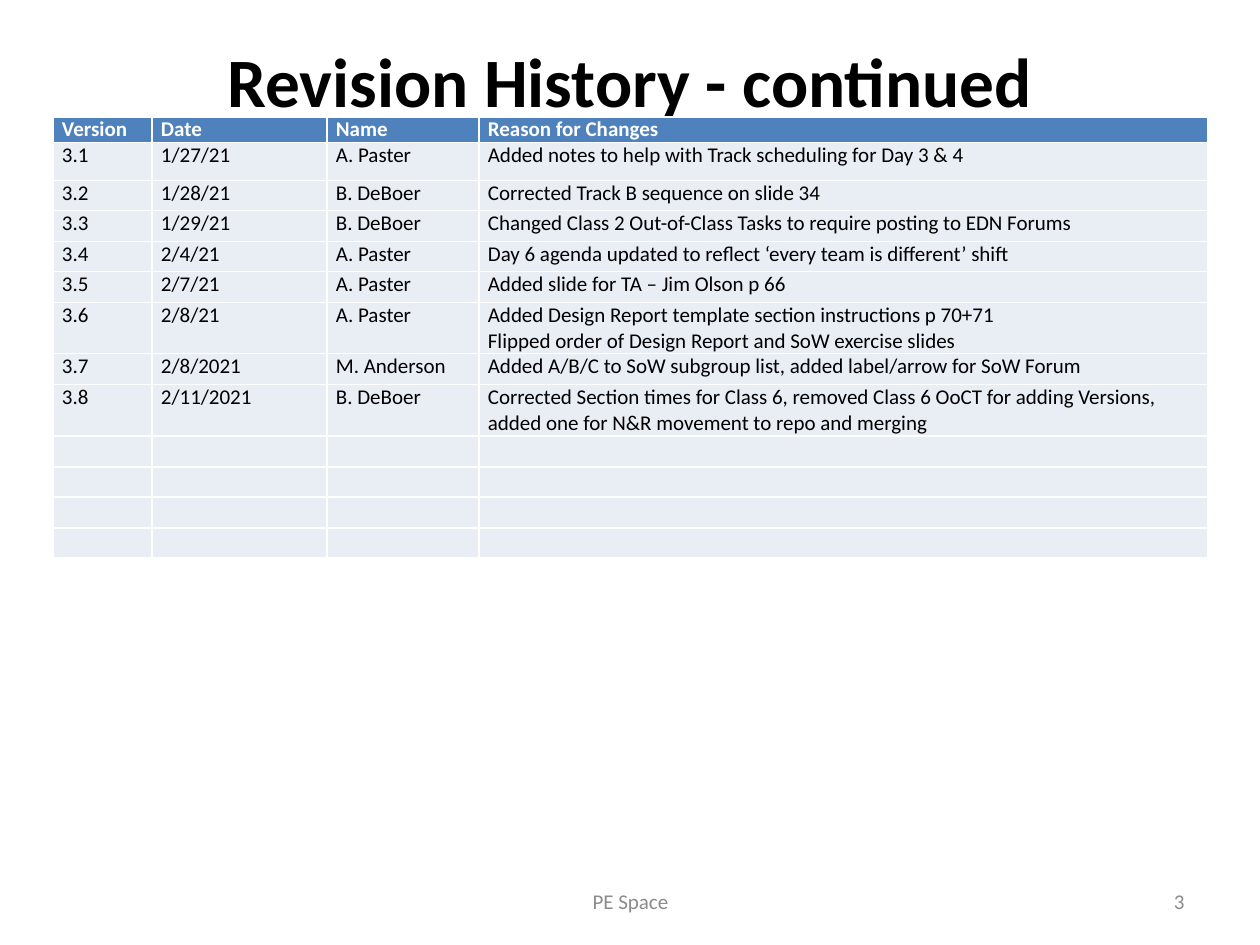
from lxml import etree
from pptx import Presentation
from pptx import util as u
from pptx.dml.color import RGBColor
from pptx.enum import text
from pptx.oxml.ns import qn

TITLE = "Revision History - continued"
COLUMNS = [("Version", 99), ("Date", 175), ("Name", 152), ("Reason for Changes", 729)]
REVISIONS = [
    ("3.1", "1/27/21", "A. Paster", "Added notes to help with Track scheduling for Day 3 & 4"),
    ("3.2", "1/28/21", "B. DeBoer", "Corrected Track B sequence on slide 34"),
    ("3.3", "1/29/21", "B. DeBoer", "Changed Class 2 Out-of-Class Tasks to require posting to EDN Forums"),
    ("3.4", "2/4/21", "A. Paster", "Day 6 agenda updated to reflect ‘every team is different’ shift"),
    ("3.5", "2/7/21", "A. Paster", "Added slide for TA – Jim Olson p 66"),
    ("3.6", "2/8/21", "A. Paster",
     "Added Design Report template section instructions p 70+71\n"
     "Flipped order of Design Report and SoW exercise slides"),
    ("3.7", "2/8/2021", "M. Anderson", "Added A/B/C to SoW subgroup list, added label/arrow for SoW Forum"),
    ("3.8", "2/11/2021", "B. DeBoer",
     "Corrected Section times for Class 6, removed Class 6 OoCT for adding Versions, "
     "added one for N&R movement to repo and merging"),
]
EMPTY_ROWS = 4
ROW_HEIGHTS = [24, 38, 30, 31, 30, 31, 51, 31, 51, 31, 30, 31, 30]
FOOTERS = [
    ("PE Space", (431, 876, 399, 50), text.PP_ALIGN.CENTER),
    ("3", (903, 876, 294, 50), text.PP_ALIGN.RIGHT),
]

BLACK = RGBColor(0x00, 0x00, 0x00)
WHITE = RGBColor(0xFF, 0xFF, 0xFF)
GREY = RGBColor(0x8C, 0x8C, 0x8C)
HEADER_BLUE = RGBColor(0x4F, 0x81, 0xBD)
ROW_BLUE = RGBColor(0xE9, 0xED, 0xF4)


def px(length):
    return u.Inches(length / 126)


def set_all(target, **values):
    for name, value in values.items():
        setattr(target, name, value)


def write(frame, wording, size, color, bold=False, align=None):
    frame.text = wording
    for para in frame.paragraphs:
        para.alignment = align
        for span in para.runs:
            set_all(span.font, name="Calibri", size=u.Pt(size), bold=bold)
            span.font.color.rgb = color
        if not para.runs:
            etree.SubElement(para._p, qn("a:endParaRPr"), sz=str(size * 100))


def add_title(page):
    title = page.shapes.title
    set_all(title, left=px(63), top=px(38), width=px(1134), height=px(158))
    write(title.text_frame, TITLE, 39.6, BLACK, True, text.PP_ALIGN.CENTER)
    set_all(title.text_frame, margin_top=0, vertical_anchor=text.MSO_ANCHOR.TOP,
            auto_size=text.MSO_AUTO_SIZE.NONE)


def add_history(page):
    headings, widths = zip(*COLUMNS)
    rows = [headings, *REVISIONS] + [("",) * len(COLUMNS)] * EMPTY_ROWS
    table = page.shapes.add_table(len(rows), len(COLUMNS), px(53), px(117),
                                  px(sum(widths)), px(sum(ROW_HEIGHTS))).table
    table.horz_banding = False
    for column, width in zip(table.columns, widths):
        column.width = px(width)
    for index, (row, height, entries) in enumerate(zip(table.rows, ROW_HEIGHTS, rows)):
        row.height = px(height)
        header = index == 0
        for cell, entry in zip(row.cells, entries):
            set_all(cell, margin_left=px(9), margin_right=px(9), margin_top=0, margin_bottom=0)
            cell.fill.solid()
            cell.fill.fore_color.rgb = HEADER_BLUE if header else ROW_BLUE
            write(cell.text_frame, entry, 12, WHITE if header else BLACK, header)


def add_footers(page):
    for wording, place, align in FOOTERS:
        frame = page.shapes.add_textbox(*map(px, place)).text_frame
        set_all(frame, word_wrap=True, vertical_anchor=text.MSO_ANCHOR.MIDDLE)
        write(frame, wording, 12, GREY, align=align)


def main():
    deck = Presentation()
    set_all(deck, slide_width=px(1260), slide_height=px(945))
    page = deck.slides.add_slide(deck.slide_layouts[5])
    add_title(page)
    add_history(page)
    add_footers(page)
    deck.save("out.pptx")


if __name__ == "__main__":
    main()
